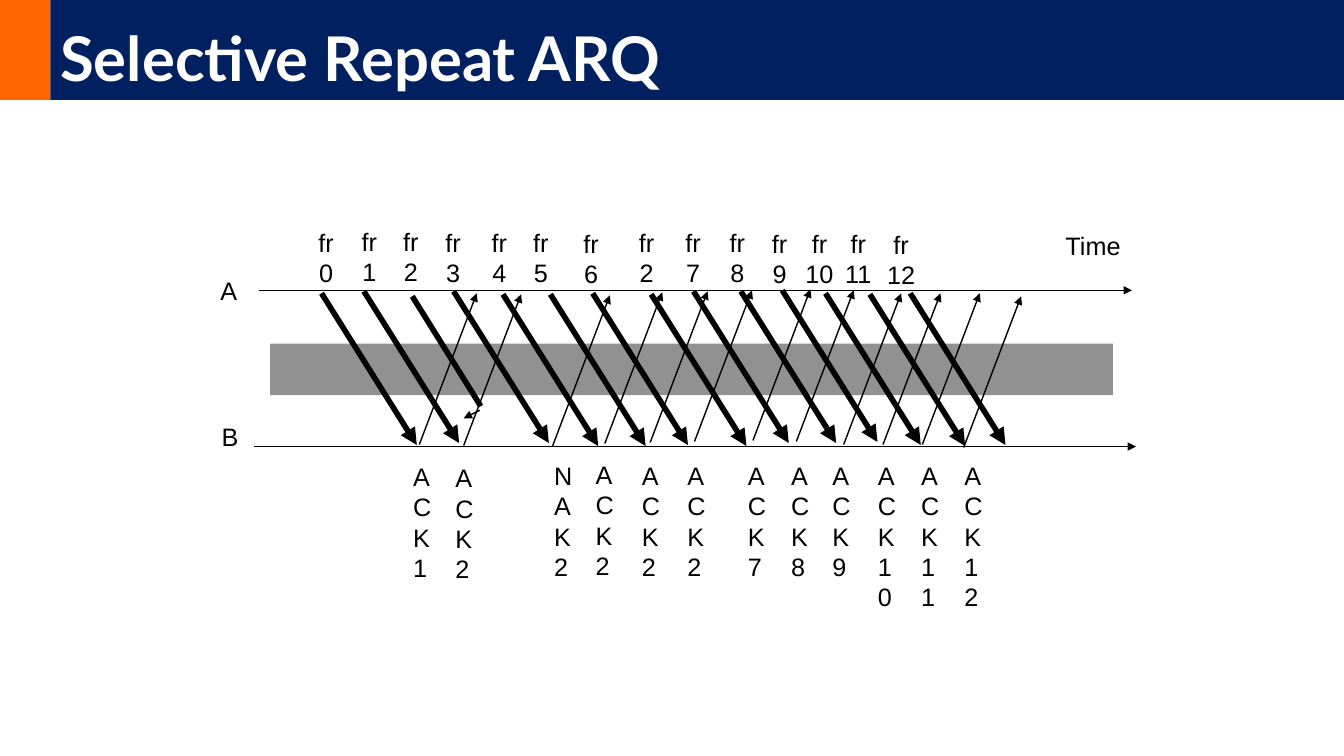
from pptx import Presentation, util as u
from pptx.dml.color import RGBColor
from pptx.enum import shapes, text
from pptx.oxml import parse_xml
from pptx.oxml.ns import nsdecls, qn

ORANGE = RGBColor(0xFF, 0x66, 0x00)
NAVY = RGBColor(0x00, 0x20, 0x60)
GRAY = RGBColor(0x91, 0x91, 0x91)
BLACK = RGBColor(0x00, 0x00, 0x00)
WHITE = RGBColor(0xFF, 0xFF, 0xFF)

CELL = 0.1  # inches per grid column and row
COLUMNS, ROWS = 133.33, 75
FRAME_RUN, LOST_RUN, REPLY_RUN = (9.45, 15.05), (6.8, 10.9), (5.7, -15)
LOST_FRAME = 2  # position in FRAMES

# number, label centre, label top, arrow start column and row
FRAMES = [
    ("0", 32.35, 21.8, 31.9, 29.1), ("1", 36.65, 21.7, 36.1, 28.9),
    ("2", 40.75, 21.7, 40.9, 29.4), ("3", 44.95, 21.8, 45.0, 28.9),
    ("4", 49.55, 21.8, 49.9, 29.2), ("5", 53.65, 21.8, 54.6, 29.2),
    ("6", 58.65, 21.9, 58.8, 29.1), ("2", 64.15, 21.8, 64.6, 29.2),
    ("7", 68.75, 21.8, 68.8, 28.9), ("8", 73.15, 21.8, 73.5, 28.9),
    ("9", 77.35, 21.9, 77.6, 28.8), ("10", 81.3, 21.9, 81.9, 29.1),
    ("11", 85.15, 21.9, 86.3, 29.2), ("12", 89.4, 22.0, 90.3, 29.1),
]
# reply, label left, label top, arrow start column and row
REPLIES = [
    ("ACK1", 40.0, 45.3, 41.6, 44.1), ("ACK2", 44.2, 45.4, 46.0, 44.2),
    ("NAK2", 54.0, 45.2, 54.8, 44.3), ("ACK2", 58.1, 45.1, 60.0, 44.0),
    ("ACK2", 62.7, 45.2, 64.5, 43.9), ("ACK2", 67.2, 45.2, 68.9, 43.8),
    ("ACK7", 73.2, 45.2, 74.7, 43.7), ("ACK8", 77.5, 45.2, 79.0, 43.8),
    ("ACK9", 81.6, 45.2, 83.7, 44.1), ("ACK10", 86.1, 45.2, 87.6, 44.1),
    ("ACK11", 90.4, 45.2, 91.5, 44.1), ("ACK12", 94.7, 45.2, 95.6, 44.4),
]


def cells(*counts):
    """Turn grid columns or rows into lengths."""
    return [u.Inches(count * CELL) for count in counts]


class ProtocolSlide:
    font, size, color = "Arial", 18, BLACK

    def __init__(self, deck):
        self.slide = deck.slides.add_slide(deck.slide_layouts[6])

    def block(self, left, top, width, height, fill):
        block = self.slide.shapes.add_shape(
            shapes.MSO_SHAPE.RECTANGLE, *cells(left, top, width, height))
        block.shadow.inherit = False
        block.fill.solid()
        block.fill.fore_color.rgb = fill
        block.line.fill.background()
        return block

    def fill_text(self, holder, lines, frame_format, align, spacing=None,
                  **font_format):
        frame = holder.text_frame
        for key, value in frame_format.items():
            setattr(frame, key, value)
        frame.text = "\n".join(lines)
        style = {"name": self.font, "size": u.Pt(self.size)} | font_format
        for paragraph in frame.paragraphs:
            paragraph.alignment = align
            paragraph.line_spacing = spacing
            font = paragraph.runs[0].font
            font.color.rgb = self.color
            for key, value in style.items():
                setattr(font, key, value)

    def label(self, left, top, width, height, *lines, inset=1.5,
              align=text.PP_ALIGN.LEFT):
        side, edge = cells(inset, inset / 2)
        box = self.slide.shapes.add_textbox(*cells(left, top, width, height))
        self.fill_text(box, lines, {
            "word_wrap": True, "margin_left": side, "margin_right": side,
            "margin_top": edge, "margin_bottom": edge}, align)

    def title(self, wording, *place):
        self.color = WHITE
        self.fill_text(
            self.block(*place, NAVY), [wording],
            {"vertical_anchor": text.MSO_ANCHOR.BOTTOM, "word_wrap": True},
            text.PP_ALIGN.LEFT, 0.9, name="Lato", size=u.Pt(44), bold=True)
        self.color = BLACK

    def arrow(self, start, run, weight=1, head=True):
        """Draw from a grid point along a run of columns and rows."""
        end = start[0] + run[0], start[1] + run[1]
        arrow = self.slide.shapes.add_connector(
            shapes.MSO_CONNECTOR.STRAIGHT, *cells(*start, *end))
        arrow.line.color.rgb = BLACK
        arrow.line.width = u.Pt(weight)
        properties = arrow._element.find(qn("p:spPr"))
        if head:
            properties.find(qn("a:ln")).append(
                parse_xml(f'<a:tailEnd {nsdecls("a")} type="triangle"/>'))
        properties.append(parse_xml(f'<a:effectLst {nsdecls("a")}/>'))


def main():
    deck = Presentation()
    deck.slide_width, deck.slide_height = cells(COLUMNS, ROWS)
    page = ProtocolSlide(deck)

    page.block(0, 0, 5, 9.9, ORANGE)
    page.title("Selective Repeat ARQ", 5, 0, COLUMNS - 5, 9.9)

    page.block(26.8, 34.1, 83.6, 5.1, GRAY)
    page.arrow((25.7, 28.8), (86.6, 0))
    page.arrow((25.2, 44.3), (87.5, 0))
    page.label(19.8, 26.6, 5.4, 4.5, " A")
    page.label(19.8, 41, 5.4, 4.5, " B")
    page.label(104.2, 22.1, 8.8, 4.5, "Time")

    for position, (number, centre, top, *start) in enumerate(FRAMES):
        page.label(centre - 3.5, top, 7, 7.5, "fr", number,
                   align=text.PP_ALIGN.CENTER)
        lost = position == LOST_FRAME
        page.arrow(start, LOST_RUN if lost else FRAME_RUN, 4, not lost)
    page.arrow((47.6, 40.7), (-1.6, 0.8))

    for reply, left, top, *start in REPLIES:
        # The narrow box stacks the letters one to a line
        page.label(left, top, 2.4, 1 + 3 * len(reply), reply, inset=1)
        page.arrow(start, REPLY_RUN)

    deck.save("out.pptx")


if __name__ == "__main__":
    main()
